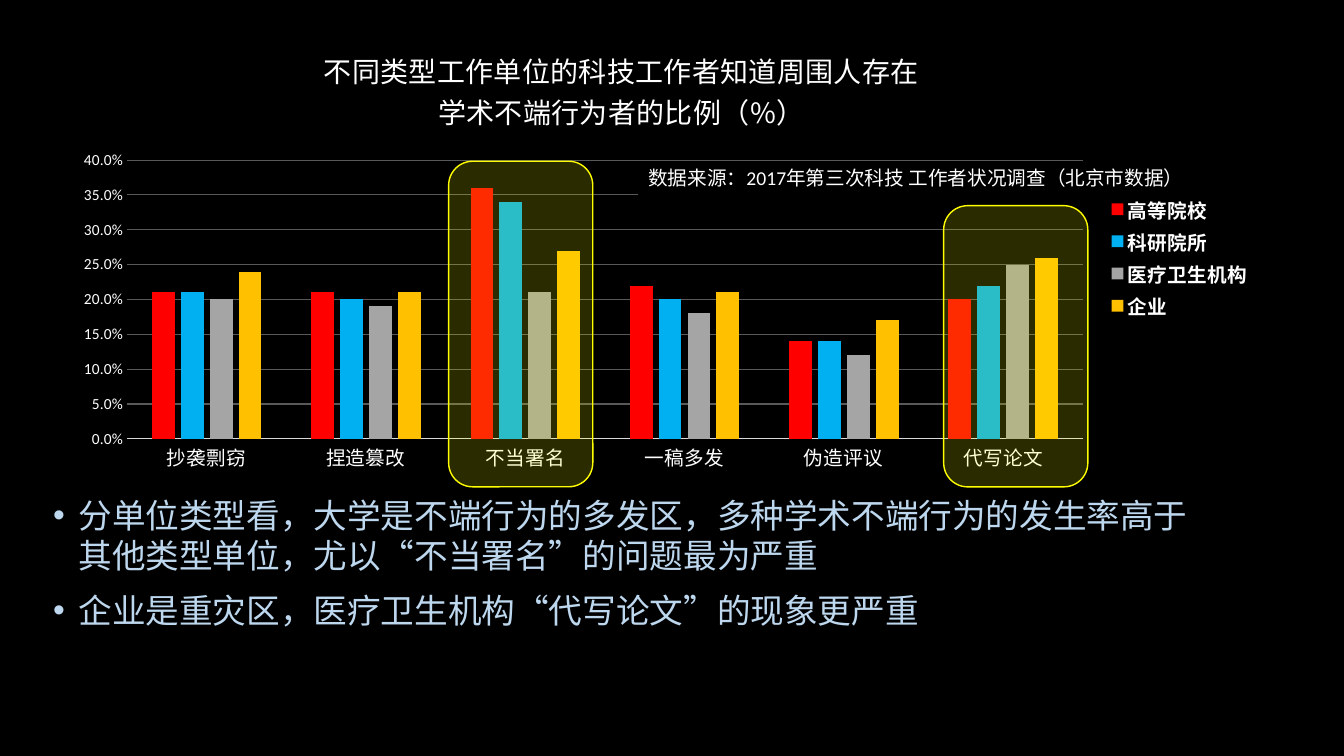
"""Build a slide charting known academic misconduct by type of workplace."""
from lxml import etree
from pptx import Presentation
from pptx import util as u
from pptx.chart.data import CategoryChartData
from pptx.dml.color import RGBColor
from pptx.enum import chart as charts, shapes, text
from pptx.oxml.ns import qn

WIDTH, HEIGHT = 13.33, 7.5
FONT, TITLE_FONT = "Calibri", "Noto Sans CJK SC"
BLACK, WHITE, YELLOW, PALE_BLUE = "000000", "FFFFFF", "FFFF00", "BDD7EE"
AXIS_GREY, GRID_GREY = "D9D9D9", "595959"

TITLE = "不同类型工作单位的科技工作者知道周围人存在\n学术不端行为者的比例（%）"
SOURCE = "数据来源：2017年第三次科技 工作者状况调查（北京市数据）"
FINDINGS = [
    "分单位类型看，大学是不端行为的多发区，多种学术不端行为的发生率高于其他类型单位，尤以“不当署名”的问题最为严重",
    "企业是重灾区，医疗卫生机构“代写论文”的现象更严重",
]
CATEGORIES = ["抄袭剽窃", "捏造篡改", "不当署名", "一稿多发", "伪造评议", "代写论文"]
SERIES = [
    ("高等院校", "FF0000", (0.21, 0.21, 0.36, 0.22, 0.14, 0.20)),
    ("科研院所", "00B0F0", (0.21, 0.20, 0.34, 0.20, 0.14, 0.22)),
    ("医疗卫生机构", "A5A5A5", (0.20, 0.19, 0.21, 0.18, 0.12, 0.25)),
    ("企业", "FFC000", (0.24, 0.21, 0.27, 0.21, 0.17, 0.26)),
]

CHART_BOX = (0.54, 0.36, 12, 4.39)
SOURCE_BOX = (6.33, 1.6, 5.69, 0.34)
FINDINGS_BOX = (0.43, 4.86, 11.5, 2.76)
HIGHLIGHT_WIDTH, HIGHLIGHT_BOTTOM = 1.43, 4.83
HIGHLIGHTS = [(4.45, 1.6), (9.36, 2.04)]
TITLE_PLACE = {"x": 0.22, "y": 0.02}
PLOT_PLACE = {"x": 0.06, "y": 0.28, "w": 0.79, "h": 0.63}
LEGEND_PLACE = {"x": 0.87, "y": 0.35, "w": 0.12, "h": 0.3}


def color(value):
    return RGBColor.from_string(value)


def inches(box):
    return [u.Inches(length) for length in box]


def set_font(font, size, value, name=FONT, bold=False):
    font.size, font.name, font.bold = u.Pt(size), name, bold
    font.color.rgb = color(value)


def set_line(line, value, width):
    line.color.rgb = color(value)
    line.width = u.Pt(width)


def place(element, position, inner=False):
    for old in element.findall(qn("c:layout")):
        element.remove(old)
    layout = etree.Element(qn("c:layout"))
    manual = etree.SubElement(layout, qn("c:manualLayout"))
    if inner:
        etree.SubElement(manual, qn("c:layoutTarget")).set("val", "inner")
    for key in "xy":
        etree.SubElement(manual, qn(f"c:{key}Mode")).set("val", "edge")
    for key, share in position.items():
        etree.SubElement(manual, qn(f"c:{key}")).set("val", str(share))
    overlay = element.find(qn("c:overlay"))
    if overlay is None:
        element.insert(0, layout)
    else:
        overlay.addprevious(layout)


def add_findings(slide):
    frame = slide.shapes.add_textbox(*inches(FINDINGS_BOX)).text_frame
    frame.word_wrap = True
    frame.text = "\n".join(FINDINGS)
    for paragraph in frame.paragraphs:
        paragraph.line_spacing = 1.0
        paragraph.space_before = u.Pt(10)
        set_font(paragraph.runs[0].font, 24, PALE_BLUE)
        properties = paragraph._p.get_or_add_pPr()
        properties.set("marL", str(u.Inches(0.25)))
        properties.set("indent", str(-u.Inches(0.25)))
        etree.SubElement(properties, qn("a:buFont")).set("typeface", "Arial")
        etree.SubElement(properties, qn("a:buChar")).set("char", "•")


def style_axes(chart):
    category, value = chart.category_axis, chart.value_axis
    for axis, size in ((category, 14), (value, 11)):
        axis.major_tick_mark = axis.minor_tick_mark = charts.XL_TICK_MARK.NONE
        set_font(axis.tick_labels.font, size, WHITE)
    set_line(category.format.line, AXIS_GREY, 0.75)
    value.format.line.fill.background()
    set_line(value.major_gridlines.format.line, GRID_GREY, 0.75)
    value.minimum_scale, value.maximum_scale, value.major_unit = 0, 0.4, 0.05
    value.tick_labels.number_format = "###0.0%"
    value.tick_labels.number_format_is_linked = False


def add_misconduct_chart(slide):
    data = CategoryChartData(number_format="###0.0%")
    data.categories = CATEGORIES
    for name, _, values in SERIES:
        data.add_series(name, values)
    chart = slide.shapes.add_chart(
        charts.XL_CHART_TYPE.COLUMN_CLUSTERED, *inches(CHART_BOX), data).chart
    set_font(chart.font, 10, BLACK)

    plot = chart.plots[0]
    plot.gap_width, plot.overlap, plot.vary_by_categories = 219, -27, False
    for series, (_, fill, _) in zip(plot.series, SERIES):
        series.format.fill.solid()
        series.format.fill.fore_color.rgb = color(fill)
    style_axes(chart)

    chart.has_title = True
    title = chart.chart_title
    title.text_frame.text = TITLE
    for paragraph in title.text_frame.paragraphs:
        set_font(paragraph.runs[0].font, 20, WHITE, TITLE_FONT)
    chart.has_legend = True
    chart.legend.position = charts.XL_LEGEND_POSITION.RIGHT
    chart.legend.include_in_layout = False
    set_font(chart.legend.font, 14, WHITE, bold=True)

    place(title._element, TITLE_PLACE)
    place(chart.legend._element, LEGEND_PLACE)
    place(chart._chartSpace.chart.plotArea, PLOT_PLACE, inner=True)


def add_block(slide, kind, box, fill):
    shape = slide.shapes.add_shape(kind, *inches(box))
    shape.shadow.inherit = False
    shape.fill.solid()
    shape.fill.fore_color.rgb = color(fill)
    shape.line.fill.background()
    return shape


def add_highlight(slide, left, top):
    box = (left, top, HIGHLIGHT_WIDTH, HIGHLIGHT_BOTTOM - top)
    shape = add_block(slide, shapes.MSO_SHAPE.ROUNDED_RECTANGLE, box, YELLOW)
    set_line(shape.line, YELLOW, 1)
    tint = shape._element.spPr.find(qn("a:solidFill"))[0]
    etree.SubElement(tint, qn("a:alpha")).set("val", "17000")


def add_source(slide):
    shape = add_block(slide, shapes.MSO_SHAPE.RECTANGLE, SOURCE_BOX, BLACK)
    frame = shape.text_frame
    frame.word_wrap = True
    frame.vertical_anchor = text.MSO_ANCHOR.TOP
    frame.text = SOURCE
    frame.paragraphs[0].alignment = text.PP_ALIGN.LEFT
    set_font(frame.paragraphs[0].runs[0].font, 14, WHITE)


def main():
    presentation = Presentation()
    presentation.slide_width, presentation.slide_height = inches((WIDTH, HEIGHT))
    slide = presentation.slides.add_slide(presentation.slide_layouts[6])
    slide.background.fill.solid()
    slide.background.fill.fore_color.rgb = color(BLACK)
    add_findings(slide)
    add_misconduct_chart(slide)
    add_highlight(slide, *HIGHLIGHTS[0])
    add_source(slide)
    add_highlight(slide, *HIGHLIGHTS[1])
    presentation.save("out.pptx")


if __name__ == "__main__":
    main()
